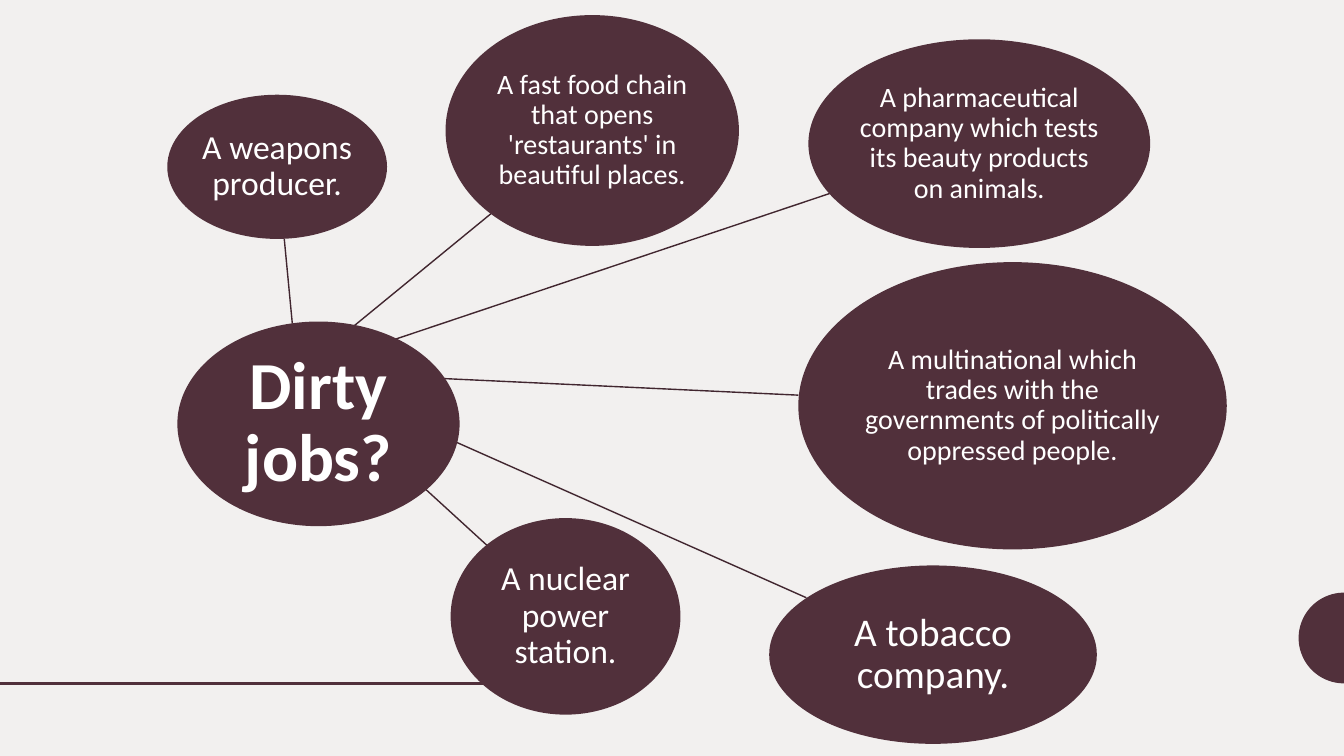
from math import cos, pi, sin

from lxml import etree
from pptx import Presentation, util as u
from pptx.dml.color import RGBColor
from pptx.enum import shapes, text
from pptx.oxml.ns import qn

PAPER = RGBColor(0xF2, 0xF0, 0xEF)
PLUM = RGBColor(0x51, 0x30, 0x3B)
DARK = RGBColor(0x41, 0x26, 0x2F)
WHITE = RGBColor(0xFF, 0xFF, 0xFF)

WIDE, HIGH = u.Inches(13.33), u.Inches(7.5)

# Boxes and points are percent of the slide's width and height
HUB = ("Dirty jobs?", 48, (13.2, 42.53, 21, 27.07))

# Label, text size, bubble box, spoke start, spoke end
JOBS = [
    ("A pharmaceutical company which tests its beauty products on animals.",
     20, (60.15, 5.2, 25.43, 27.6), (25.73, 47.07), (61.73, 25.6)),
    ("A multinational which trades with the governments of politically "
     "oppressed people.",
     20, (59.4, 34.67, 31.88, 38), (25.73, 49.47), (59.4, 52.27)),
    ("A weapons producer.",
     24, (12.45, 12.53, 16.35, 19.07), (21.75, 42.8), (21.15, 31.6)),
    ("A fast food chain that opens 'restaurants' in beautiful places.",
     20, (33.15, 2, 21.83, 30.53), (25.73, 44), (36.53, 28.27)),
    ("A nuclear power station.",
     24, (33.53, 68.53, 17.1, 26), (25.73, 55.07), (36.23, 72.13)),
    ("A tobacco company.",
     28, (57.23, 74.8, 24.38, 23.6), (25.73, 52), (60, 79.07)),
]


def col(share):
    return round(WIDE * share / 100)


def row(share):
    return round(HIGH * share / 100)


def paint(shape):
    shape.shadow.inherit = False
    shape.fill.solid()
    shape.fill.fore_color.rgb = PLUM
    shape.line.fill.background()


def add_line(slide, start, end, color, width):
    line = slide.shapes.add_connector(
        shapes.MSO_CONNECTOR.STRAIGHT,
        col(start[0]), row(start[1]), col(end[0]), row(end[1]))
    line.line.color.rgb = color
    line.line.width = u.Pt(width)
    etree.SubElement(line._element.spPr, qn("a:effectLst"))


def add_bubble(slide, label, size, box, bold=False):
    x, y, w, h = box
    oval = slide.shapes.add_shape(
        shapes.MSO_SHAPE.OVAL, col(x), row(y), col(w), row(h))
    paint(oval)
    frame = oval.text_frame
    frame.word_wrap = True
    frame.vertical_anchor = text.MSO_ANCHOR.MIDDLE
    inset = u.Pt(size / 20)
    frame.margin_left = frame.margin_right = inset
    frame.margin_top = frame.margin_bottom = inset
    frame.text = label
    para = frame.paragraphs[0]
    para.alignment = text.PP_ALIGN.CENTER
    para.line_spacing = 0.9
    font = para.runs[0].font
    font.name, font.size, font.bold = "Calibri", u.Pt(size), bold
    font.color.rgb = WHITE


def add_half(slide, mid, radius, steps=48):
    """Draw the left half of a disc, flat against the slide's right edge."""
    turns = [pi / 2 + pi * i / steps for i in range(steps + 1)]
    points = [(WIDE + round(radius * cos(t)), mid - round(radius * sin(t)))
              for t in turns]
    pen = slide.shapes.build_freeform(*points[0])
    pen.add_line_segments(points[1:], close=True)
    paint(pen.convert_to_shape())


def main():
    deck = Presentation()
    deck.slide_width, deck.slide_height = WIDE, HIGH
    slide = deck.slides.add_slide(deck.slide_layouts[6])
    slide.background.fill.solid()
    slide.background.fill.fore_color.rgb = PAPER

    # Edge decoration
    add_half(slide, row(84.4), row(6))
    add_line(slide, (0, 90.4), (36.9, 90.4), PLUM, 2)

    # Spokes lie behind every bubble
    for _, _, _, start, end in JOBS:
        add_line(slide, start, end, DARK, 1)

    # Hub and its jobs
    add_bubble(slide, *HUB, bold=True)
    for label, size, box, _, _ in JOBS:
        add_bubble(slide, label, size, box)

    deck.save("out.pptx")


if __name__ == "__main__":
    main()
